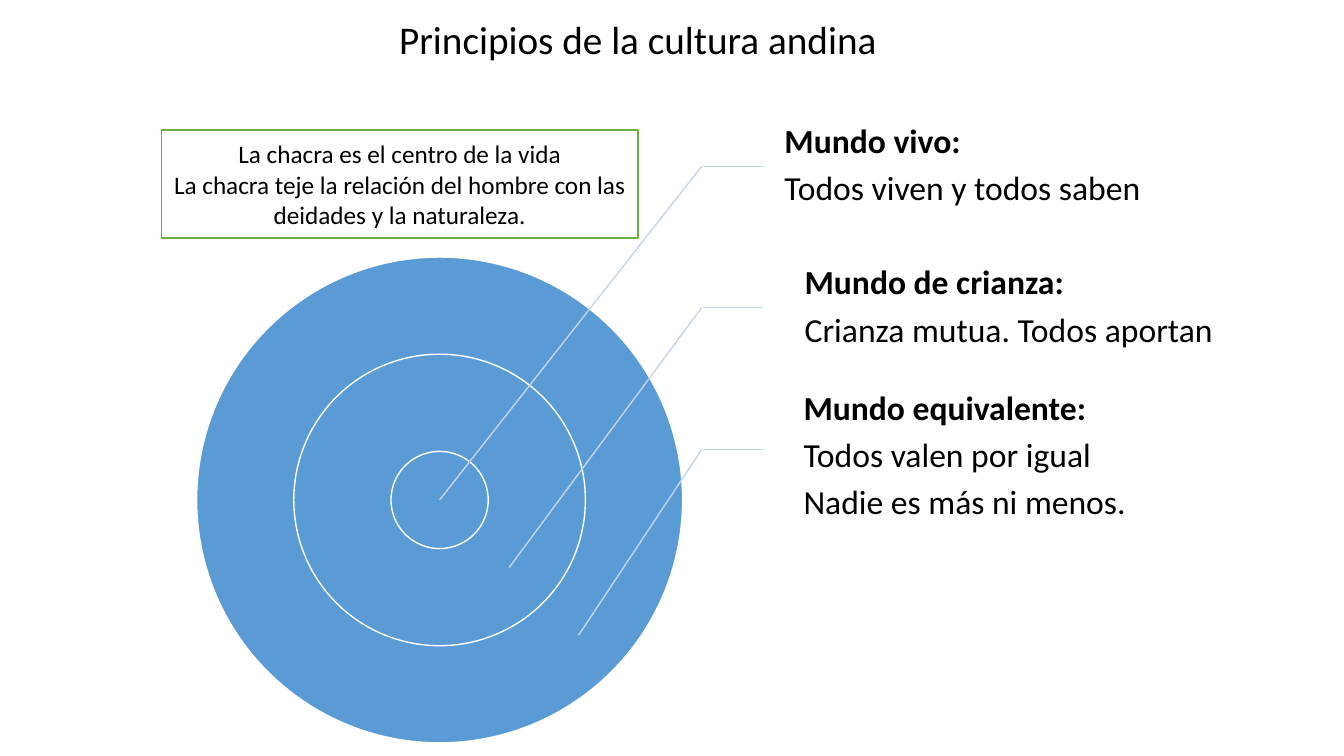
from pptx import Presentation
from pptx.dml.color import RGBColor as RGB
from pptx.enum.shapes import MSO_CONNECTOR as CON, MSO_SHAPE as GEO
from pptx.enum.text import MSO_ANCHOR as ANC, PP_ALIGN as AL
from pptx.util import Pt
from lxml.etree import SubElement as Sub

PX = 9144
HUE = {"disc": "5B9BD5", "white": "FFFFFF", "lead": "C4D5EB",
       "edge": "70AD47", "ink": "000000"}
NS = "{http://schemas.openxmlformats.org/drawingml/2006/main}"
RINGS = 5, 3, 1
WORLDS = [
    ((759, 95, 485, 140), 165, (436, 496),
     ["Mundo vivo:", "Todos viven y todos saben"]),
    ((779, 235, 433, 140), 305, (505, 563),
     ["Mundo de crianza:", "Crianza mutua. Todos aportan"]),
    ((778, 383, 446, 140), 446, (574, 630),
     ["Mundo equivalente:", "Todos valen por igual", "Nadie es más ni menos."]),
]


def emu(*nums):
    """Turn px lengths into EMU."""
    return [round(n * PX) for n in nums]


def tint(hue):
    """Give a named colour."""
    return RGB.from_string(HUE[hue])


def put(slide, kind, box, fill, edge=None):
    """Draw a flat preset shape."""
    item = slide.shapes.add_shape(kind, *emu(*box))
    item.shadow.inherit = False
    item.fill.solid()
    item.fill.fore_color.rgb = tint(fill)
    if edge:
        item.line.color.rgb = tint(edge)
        item.line.width = Pt(1)
    else:
        item.line.fill.background()
    return item


def write(para, text, size, bold=False):
    """Add one run to a paragraph."""
    run = para.add_run()
    run.text = text
    font = run.font
    font.name, font.size, font.bold = "Calibri", Pt(size), bold
    font.color.rgb = tint("ink")


def fill(item, rows, size, head=False):
    """Fill a shape with rows of text and yield its paragraphs."""
    frame = item.text_frame
    frame.word_wrap = True
    frame.vertical_anchor = ANC.MIDDLE
    for num, text in enumerate(rows):
        para = frame.add_paragraph() if num else frame.paragraphs[0]
        write(para, text, size, head and num == 0)
    return frame.paragraphs


def panel(slide, box, rows, size, edge=None):
    """Draw a white box with centred text."""
    item = put(slide, GEO.RECTANGLE, box, "white", edge)
    for para in fill(item, rows, size):
        para.alignment = AL.CENTER


def target(slide, box):
    """Draw concentric discs inside a square box."""
    left, top, side, _ = box
    for ring in RINGS:
        wide = side * ring / RINGS[0]
        gap = (side - wide) / 2
        put(slide, GEO.OVAL, (left + gap, top + gap, wide, wide), "disc", "white")


def lead(slide, start, end):
    """Draw one thin leader line."""
    line = slide.shapes.add_connector(CON.STRAIGHT, *emu(*start, *end))
    line.line.color.rgb = tint("lead")
    line.line.width = Pt(1)
    Sub(line._element.spPr, NS + "effectLst")


def world(slide, box, level, spot, rows):
    """Draw a label in its box with a bent leader to a spot."""
    item = slide.shapes.add_textbox(*emu(*box))
    frame = item.text_frame
    frame.margin_left, frame.margin_top = emu(19, 3)
    frame.margin_right, frame.margin_bottom = emu(3, 3)
    for para in fill(item, rows, 24, True):
        para.line_spacing = 0.9
        para.space_after = Pt(8)
    lead(slide, (697, level), (757, level))
    lead(slide, (696, level), spot)


def main():
    """Build and save the slide."""
    deck = Presentation()
    deck.slide_width, deck.slide_height = emu(1333, 750)
    slide = deck.slides.add_slide(deck.slide_layouts[6])
    target(slide, (195, 255, 482, 482))
    for part in WORLDS:
        world(slide, *part)
    panel(slide, (160, 129, 473, 107),
          ["La chacra es el centro de la vida",
           "La chacra teje la relación del hombre con las deidades y la naturaleza."],
          18, "edge")
    panel(slide, (268, 9, 729, 59), ["Principios de la cultura andina"], 28)
    deck.save("out.pptx")


if __name__ == "__main__":
    main()
